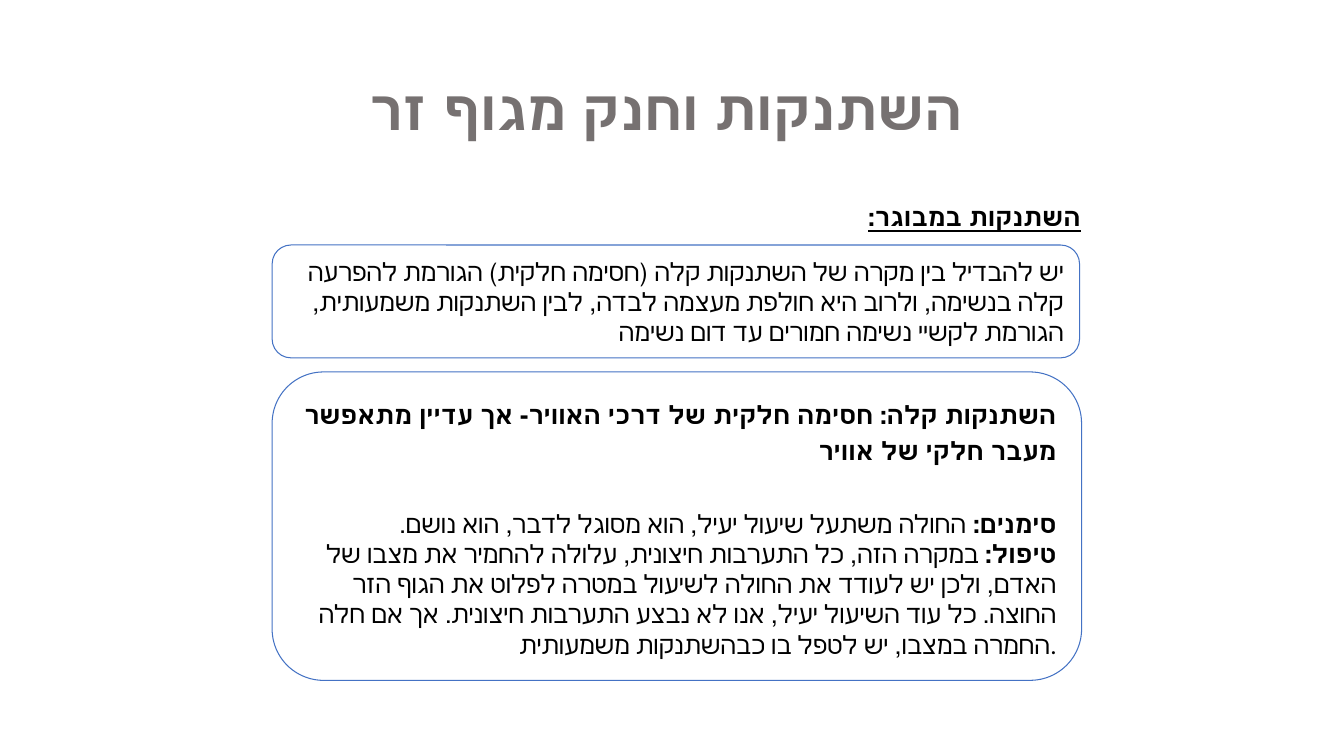
from pptx import Presentation
from pptx.dml.color import RGBColor
from pptx.enum.shapes import MSO_SHAPE as Shape
from pptx.enum.text import MSO_ANCHOR as Anchor, MSO_AUTO_SIZE as Fit, PP_ALIGN as Align
from pptx.util import Pt

GREY = RGBColor(0x76, 0x71, 0x71)
BLUE = RGBColor(0x44, 0x72, 0xC4)
BLACK = RGBColor(0, 0, 0)
SANS = "Calibri"
SERIF = "Times New Roman"


def put_text(para, *runs, size=18, font=SANS, color=BLACK, line=False,
             align=Align.RIGHT, rtl=True, space=1.0, before=0):
    """Fill a paragraph with (text, bold) runs in one format."""
    para.alignment = align
    para.line_spacing = space
    para.space_before = Pt(before)
    para._p.get_or_add_pPr().set("rtl", "1" if rtl else "0")
    for text, bold in runs:
        run = para.add_run()
        run.text = text
        face = run.font
        face.size, face.name, face.bold = Pt(size), font, bold
        face.underline = line
        face.color.rgb = color


def set_frame(frame, anchor):
    frame.word_wrap = True
    frame.auto_size = Fit.SHAPE_TO_FIT_TEXT
    frame.vertical_anchor = anchor
    return frame


def add_title(slide):
    title = slide.shapes.title
    title.left, title.top = Pt(178.6), Pt(49)
    title.width, title.height = Pt(594), Pt(115.2)
    frame = title.text_frame
    frame.auto_size = Fit.NONE
    frame.vertical_anchor = Anchor.MIDDLE
    frame.margin_bottom = Pt(57)
    put_text(frame.paragraphs[0], ("השתנקות וחנק מגוף זר", True),
             size=40, color=GREY, align=Align.CENTER, space=0.9)


def add_head(slide):
    box = slide.shapes.add_textbox(Pt(419), Pt(136.1), Pt(360), Pt(33.1))
    frame = set_frame(box.text_frame, Anchor.TOP)
    put_text(frame.paragraphs[0], ("השתנקות במבוגר:", True),
             font=SERIF, line=True, align=Align.JUSTIFY, space=1.2)


def add_panel(slide, top, width, height):
    panel = slide.shapes.add_shape(
        Shape.ROUNDED_RECTANGLE, Pt(194.4), Pt(top), Pt(width), Pt(height))
    panel.shadow.inherit = False
    panel.fill.background()
    panel.line.color.rgb = BLUE
    panel.line.width = Pt(0.75)
    return set_frame(panel.text_frame, Anchor.MIDDLE)


def main():
    deck = Presentation()
    deck.slide_width, deck.slide_height = Pt(960), Pt(540)
    slide = deck.slides.add_slide(deck.slide_layouts[5])
    add_title(slide)

    mild = add_panel(slide, 265.7, 578.2, 220.3)
    put_text(mild.paragraphs[0],
             ("השתנקות קלה: חסימה חלקית של דרכי האוויר- אך עדיין מתאפשר "
              "מעבר חלקי של אוויר", True),
             font=SERIF, space=1.2)
    put_text(mild.add_paragraph(), ("סימנים: ", True),
             ("החולה משתעל שיעול יעיל, הוא מסוגל לדבר, הוא נושם.", False),
             font=SERIF, space=1.2, before=26)
    put_text(mild.add_paragraph(), ("טיפול:", True),
             (" במקרה הזה, כל התערבות חיצונית, עלולה להחמיר את מצבו של האדם, "
              "ולכן יש לעודד את החולה לשיעול במטרה לפלוט את הגוף הזר החוצה. "
              "כל עוד השיעול יעיל, אנו לא נבצע התערבות חיצונית. אך אם חלה "
              "החמרה במצבו, יש לטפל בו כבהשתנקות משמעותית.", False),
             rtl=False)

    intro = add_panel(slide, 175, 576.7, 80.6)
    put_text(intro.paragraphs[0],
             ("יש להבדיל בין מקרה של השתנקות קלה (חסימה חלקית) הגורמת להפרעה "
              "קלה בנשימה, ולרוב היא חולפת מעצמה לבדה, לבין השתנקות משמעותית, "
              "הגורמת לקשיי נשימה חמורים עד דום נשימה", False),
             rtl=False)

    add_head(slide)
    deck.save("out.pptx")


if __name__ == "__main__":
    main()
